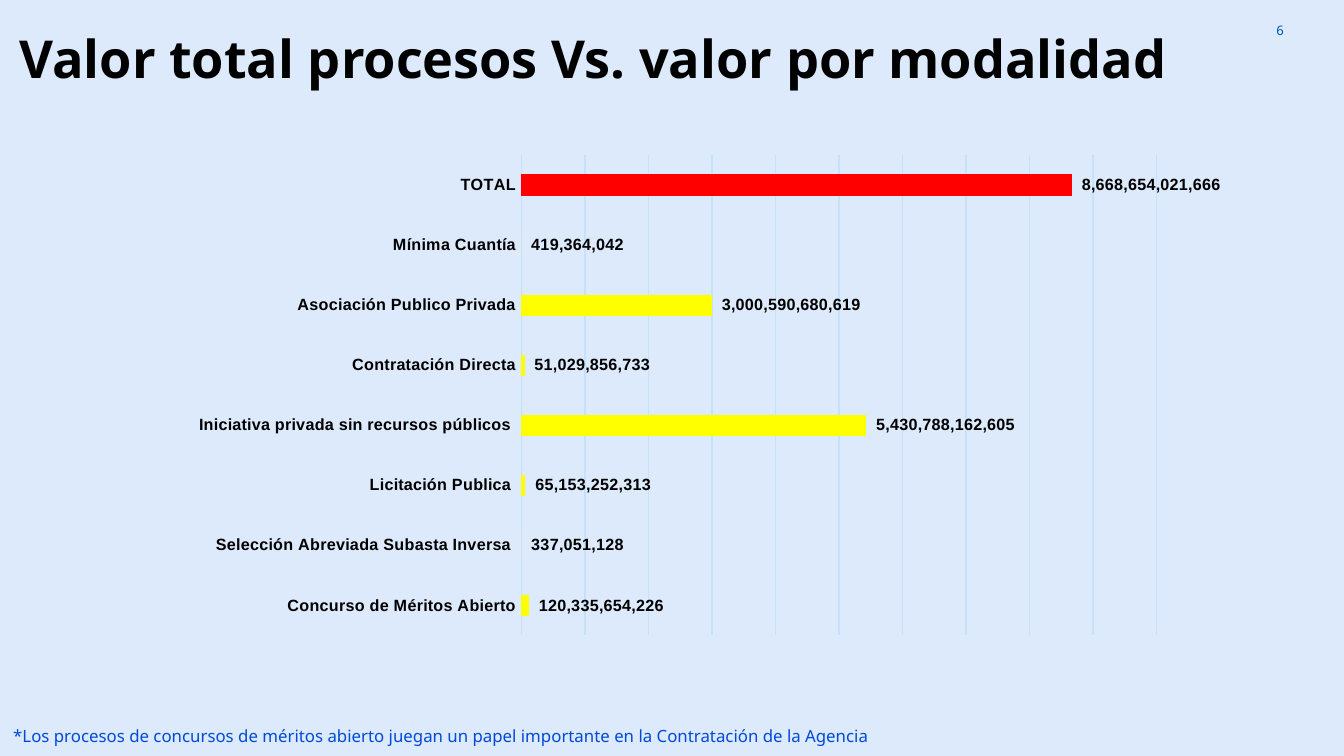
from dataclasses import dataclass

from lxml.etree import SubElement
from pptx import Presentation
from pptx.chart.data import CategoryChartData
from pptx.dml.color import RGBColor
from pptx.enum.chart import XL_CHART_TYPE, XL_LABEL_POSITION, XL_TICK_LABEL_POSITION, XL_TICK_MARK
from pptx.enum.text import MSO_ANCHOR, MSO_AUTO_SIZE, PP_ALIGN
from pptx.oxml.ns import qn
from pptx.util import Inches, Pt


@dataclass(frozen=True)
class Theme:
    """Colours, fonts and type sizes of the slide."""
    back: str = "DCEAFB"
    ink: str = "000000"
    number: str = "0054BC"
    note: str = "0049DB"
    grid: str = "C6E2FB"
    bar: str = "FFFF00"
    total: str = "FF0000"
    text_font: str = "Noto Sans"
    chart_font: str = "Arial"
    title_size: float = 28
    note_size: float = 9
    chart_size: float = 8.7
    number_size: float = 7


THEME = Theme()
WIDTH = 10
HEIGHT = WIDTH * 9 / 16
NUMBER_FORMAT = '_-* #,##0_-;\\-* #,##0_-;_-* "-"??_-;_-@_'
MODALITIES = {
    "Concurso de Méritos Abierto": 120335654226,
    "Selección Abreviada Subasta Inversa ": 337051128,
    "Licitación Publica ": 65153252313,
    "Iniciativa privada sin recursos públicos ": 5430788162605,
    "Contratación Directa": 51029856733,
    "Asociación Publico Privada": 3000590680619,
    "Mínima Cuantía": 419364042,
    "TOTAL": 8668654021666,
}


def apply(target, **values):
    """Set each given value as an attribute of the target."""
    for name, value in values.items():
        setattr(target, name, value)


def area(x, y, w, h):
    """Turn shares of the slide into left, top, width and height."""
    return Inches(x * WIDTH), Inches(y * HEIGHT), Inches(w * WIDTH), Inches(h * HEIGHT)


def style_font(font, size, color, name, bold=False):
    """Give a font its size, colour, face and weight."""
    apply(font, size=Pt(size), name=name, bold=bold)
    font.color.rgb = RGBColor.from_string(color)


def paint(fill, color):
    """Make a fill solid in one colour."""
    fill.solid()
    fill.fore_color.rgb = RGBColor.from_string(color)


def draw_line(line, color):
    """Give a chart line its colour and width."""
    line.color.rgb = RGBColor.from_string(color)
    line.width = Pt(0.75)


def write(sp, text, size, color, bold=False, align=PP_ALIGN.LEFT, spacing=1.0, **frame):
    """Fill a shape with one formatted paragraph."""
    tf = sp.text_frame
    apply(tf, **{"word_wrap": True, "auto_size": MSO_AUTO_SIZE.NONE, **frame})
    p = tf.paragraphs[0]
    apply(p, alignment=align, line_spacing=spacing)
    r = p.add_run()
    r.text = text
    style_font(r.font, size, color, THEME.text_font, bold)


def add_title(s, text):
    """Place and fill the title placeholder."""
    sp = s.shapes.title
    apply(sp, **dict(zip(("left", "top", "width", "height"), area(-0.03, 0.034, 0.942, 0.096))))
    write(sp, text, THEME.title_size, THEME.ink, True, PP_ALIGN.CENTER, 0.9,
          vertical_anchor=MSO_ANCHOR.MIDDLE, margin_left=Inches(0.07), margin_right=Inches(0.07),
          margin_top=Inches(0.04), margin_bottom=Inches(0.04))


def add_text(s, box, *args, **kwargs):
    """Add a text box holding one paragraph."""
    write(s.shapes.add_textbox(*area(*box)), *args, **kwargs)


def place_plot(chart, **shares):
    """Fix the inner plot area as shares of the chart."""
    plot_area = chart._chartSpace.chart.plotArea
    for old in plot_area.findall(qn("c:layout")):
        plot_area.remove(old)
    layout = SubElement(plot_area, qn("c:layout"))
    plot_area.insert(0, layout)
    manual = SubElement(layout, qn("c:manualLayout"))
    settings = {"layoutTarget": "inner", "xMode": "edge", "yMode": "edge", **shares}
    for tag, value in settings.items():
        SubElement(manual, qn(f"c:{tag}")).set("val", str(value))


def style_axes(chart):
    """Format the category axis and the hidden value axis with its grid."""
    cat, val = chart.category_axis, chart.value_axis
    apply(cat, major_tick_mark=XL_TICK_MARK.NONE, minor_tick_mark=XL_TICK_MARK.NONE,
          tick_label_position=XL_TICK_LABEL_POSITION.NEXT_TO_AXIS, has_major_gridlines=False)
    cat.tick_labels.offset = 0
    style_font(cat.tick_labels.font, THEME.chart_size, THEME.ink, THEME.chart_font, True)
    draw_line(cat.format.line, THEME.grid)
    apply(val, minimum_scale=0, maximum_scale=10**13, major_unit=10**12,
          has_major_gridlines=True, visible=False)
    apply(val.tick_labels, number_format=NUMBER_FORMAT, number_format_is_linked=False)
    draw_line(val.major_gridlines.format.line, THEME.grid)


def add_bars(s, box, values):
    """Add the bar chart with labelled bars and a highlighted total."""
    data = CategoryChartData(number_format=NUMBER_FORMAT)
    data.categories = list(values)
    data.add_series("Series 1", list(values.values()))
    chart = s.shapes.add_chart(XL_CHART_TYPE.BAR_CLUSTERED, *area(*box), data).chart
    apply(chart, has_legend=False, has_title=False)
    style_font(chart.font, THEME.chart_size, THEME.ink, THEME.chart_font, True)
    style_axes(chart)
    plot = chart.plots[0]
    apply(plot, gap_width=182, vary_by_categories=False)
    series = plot.series[0]
    series.invert_if_negative = False
    paint(series.format.fill, THEME.bar)
    paint(series.points[len(values) - 1].format.fill, THEME.total)
    labels = series.data_labels
    apply(labels, show_value=True, number_format=NUMBER_FORMAT, number_format_is_linked=False,
          position=XL_LABEL_POSITION.OUTSIDE_END)
    style_font(labels.font, THEME.chart_size, THEME.ink, THEME.chart_font, True)
    place_plot(chart, x=0.32, y=0.02, w=0.62, h=0.96)


def main():
    """Build the slide and save it."""
    prs = Presentation()
    apply(prs, slide_width=Inches(WIDTH), slide_height=Inches(HEIGHT))
    s = prs.slides.add_slide(prs.slide_layouts[5])
    paint(s.background.fill, THEME.back)
    add_text(s, (0.905, 0.002, 0.06, 0.077), "6", THEME.number_size, THEME.number,
             align=PP_ALIGN.RIGHT, vertical_anchor=MSO_ANCHOR.MIDDLE)
    add_title(s, "Valor total procesos Vs. valor por modalidad")
    add_text(s, (0, 0.951, 0.931, 0.044),
             "*Los procesos de concursos de méritos abierto juegan un papel importante "
             "en la Contratación de la Agencia", THEME.note_size, THEME.note,
             auto_size=MSO_AUTO_SIZE.SHAPE_TO_FIT_TEXT)
    add_bars(s, (0.144, 0.192, 0.768, 0.662), MODALITIES)
    prs.save("out.pptx")


if __name__ == "__main__":
    main()
